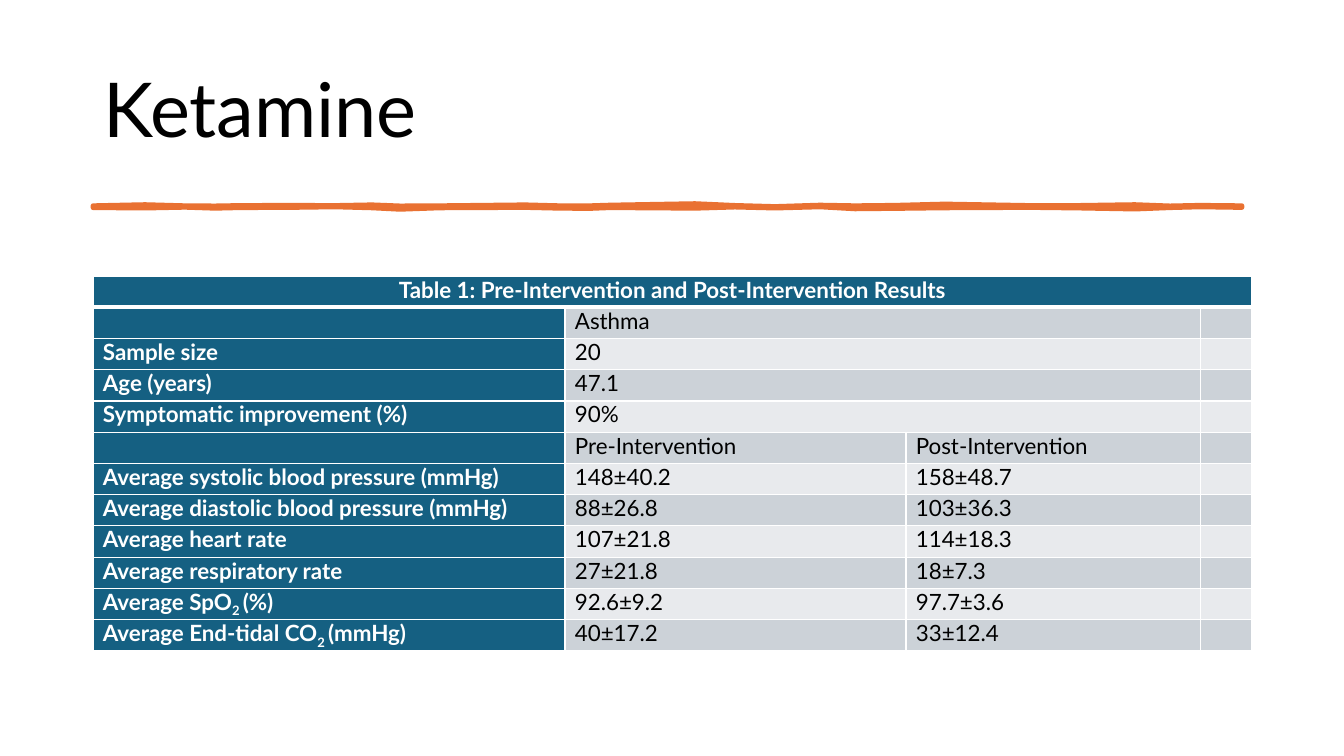
from lxml import etree
from pptx import Presentation
from pptx.dml.color import RGBColor
from pptx.enum.text import MSO_ANCHOR, PP_ALIGN
from pptx.oxml import parse_xml
from pptx.oxml.ns import nsdecls, qn
from pptx.util import Pt

PX = 914400 / 100.8
LEFT, CENTER = PP_ALIGN.LEFT, PP_ALIGN.CENTER
MIDDLE = MSO_ANCHOR.MIDDLE
THEME = {
    "font": "Lato", "title_size": 54, "table_size": 16,
    "ink": "000000", "white": "FFFFFF", "accent": "E97132",
    "header": "156082", "bands": ("E8EAED", "CCD2D8"),
}


def px(length):
    return round(length * PX)


def style(para, size, color, bold=False, align=LEFT):
    para.alignment = align
    para.font.name = THEME["font"]
    para.font.size = Pt(size)
    para.font.bold = bold
    para.font.color.rgb = RGBColor.from_string(color)


deck = Presentation()
deck.slide_width, deck.slide_height = px(1344), px(756)
page = deck.slides.add_slide(deck.slide_layouts[5])

title = page.shapes.title
title.left, title.top, title.width, title.height = px(93), px(40), px(1159), px(146)
title.text_frame.text = "Ketamine"
title.text_frame.vertical_anchor = MIDDLE
title_para = title.text_frame.paragraphs[0]
title_para.line_spacing = 0.9
style(title_para, THEME["title_size"], THEME["ink"])

# x in px, top and bottom edge in tenths of a px
stroke_stations = [
    (93, 2056, 2078), (145, 2045, 2082), (185, 2056, 2074), (215, 2058, 2084),
    (240, 2054, 2078), (290, 2052, 2076), (335, 2054, 2070), (372, 2047, 2080),
    (400, 2058, 2094), (440, 2056, 2080), (525, 2047, 2076), (560, 2056, 2084),
    (590, 2056, 2086), (610, 2050, 2078), (695, 2035, 2084), (735, 2053, 2072),
    (775, 2064, 2082), (820, 2050, 2070), (855, 2056, 2090), (895, 2052, 2086),
    (945, 2039, 2080), (1030, 2054, 2076), (1080, 2053, 2082), (1135, 2045, 2092),
    (1170, 2058, 2078), (1200, 2052, 2070), (1242, 2056, 2076),
]
top_edge = [(x * 10, top) for x, top, bottom in stroke_stations]
bottom_edge = [(x * 10, bottom) for x, top, bottom in reversed(stroke_stations)]
outline = page.shapes.build_freeform(*top_edge[0], scale=PX / 10)
outline.add_line_segments(top_edge[1:] + bottom_edge, close=True)
brush = outline.convert_to_shape()
brush.shadow.inherit = False
brush.fill.solid()
brush.fill.fore_color.rgb = RGBColor.from_string(THEME["accent"])
brush.line.color.rgb = RGBColor.from_string(THEME["accent"])
brush.line.width = Pt(3.25)
etree.SubElement(brush.line._get_or_add_ln(), qn("a:round"))

rows = [
    ("Table 1: Pre-Intervention and Post-Intervention Results",),
    ("", "Asthma"),
    ("Sample size", "20"),
    ("Age (years)", "47.1"),
    ("Symptomatic improvement (%)", "90%"),
    ("", "Pre-Intervention", "Post-Intervention"),
    ("Average systolic blood pressure (mmHg)", "148±40.2", "158±48.7"),
    ("Average diastolic blood pressure (mmHg)", "88±26.8", "103±36.3"),
    ("Average heart rate", "107±21.8", "114±18.3"),
    ("Average respiratory rate", "27±21.8", "18±7.3"),
    ("Average SpO|2 |(%)", "92.6±9.2", "97.7±3.6"),
    ("Average End-tidal CO|2 |(mmHg)", "40±17.2", "33±12.4"),
]
column_widths = [472, 341, 295, 51]
table_height = 375
frame = page.shapes.add_table(
    len(rows), len(column_widths), px(93), px(276), px(sum(column_widths)), px(table_height))
table = frame.table
for column, width in zip(table.columns, column_widths):
    column.width = px(width)
for row in table.rows:
    row.height = px(table_height / len(rows))
table.cell(0, 0).merge(table.cell(0, 3))
for r in range(1, 5):
    table.cell(r, 1).merge(table.cell(r, 2))

for r, texts in enumerate(rows):
    for c in range(len(column_widths)):
        cell = table.cell(r, c)
        cell.margin_left = cell.margin_right = px(10)
        cell.margin_top = cell.margin_bottom = 0
        heading = r == 0 or c == 0
        for side in "LRTB":
            thick = (r, side) in ((0, "B"), (1, "T"))
            cell._tc.get_or_add_tcPr().append(parse_xml(
                f'<a:ln{side} {nsdecls("a")} w="{Pt(3 if thick else 1)}"><a:solidFill>'
                f'<a:srgbClr val="{THEME["white"]}"/></a:solidFill></a:ln{side}>'))
        cell.fill.solid()
        cell.fill.fore_color.rgb = RGBColor.from_string(
            THEME["header"] if heading else THEME["bands"][r % 2])
        para = cell.text_frame.paragraphs[0]
        style(para, THEME["table_size"], THEME["white"] if heading else THEME["ink"],
              heading, CENTER if r == 0 else LEFT)
        if c < len(texts) and texts[c]:
            for part, text in enumerate(texts[c].split("|")):
                span = para.add_run()
                span.text = text
                if part == 1:
                    span._r.get_or_add_rPr().set("baseline", "-25000")

deck.save("out.pptx")
